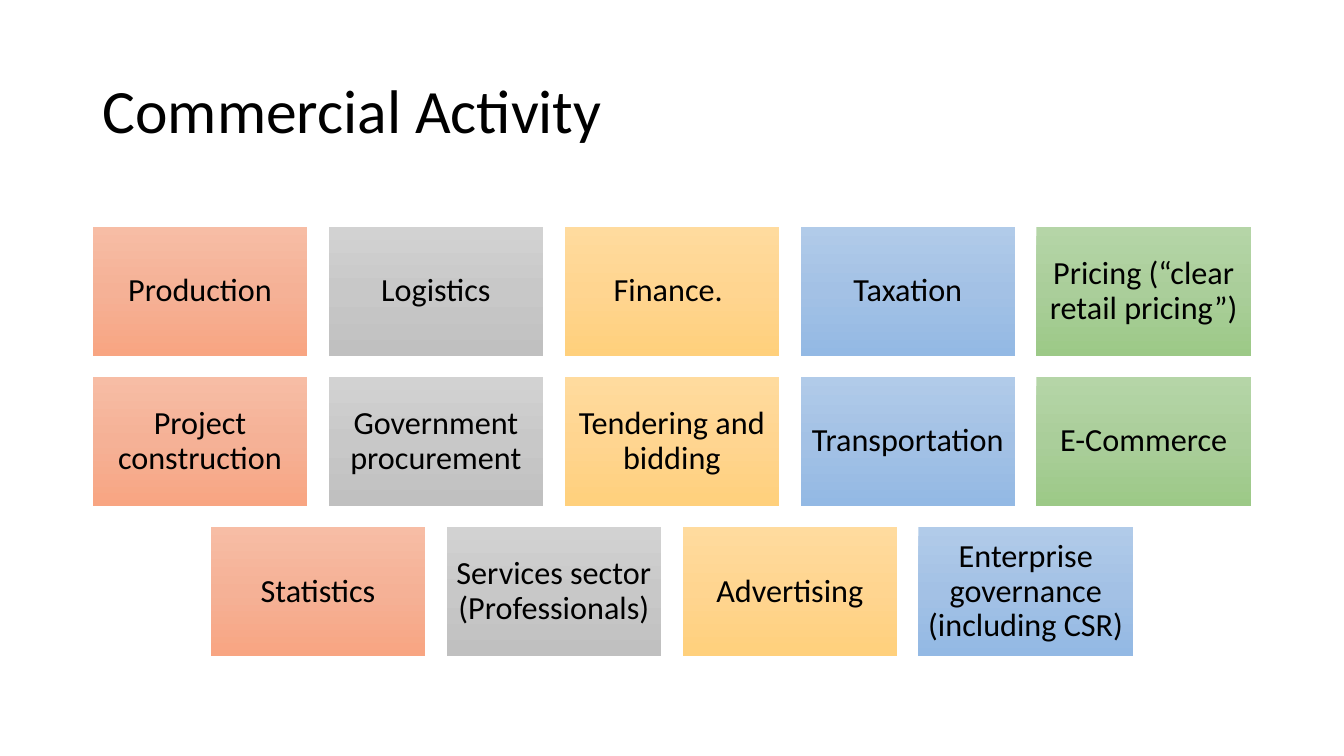
"""Build the Commercial Activity slide: a title above centred rows of gradient tiles."""
from copy import deepcopy

from pptx import Presentation
from pptx.dml.color import RGBColor
from pptx.enum.shapes import MSO_SHAPE
from pptx.enum.text import MSO_ANCHOR, PP_ALIGN
from pptx.oxml.ns import qn
from pptx.util import Inches, Pt

SLIDE_WIDTH, SLIDE_HEIGHT = 13.33, 7.5
TILE_WIDTH, TILE_HEIGHT, GAP = 2.13, 1.28, 0.21
MARGIN, FIRST_ROW_TOP = 0.92, 2.25

COLUMN_GRADIENTS = [
    ("F7BDA5", "F5B196", "F8A582"),
    ("D2D2D2", "C8C8C8", "C0C0C0"),
    ("FFDB9E", "FFD590", "FFD07C"),
    ("B1CBE9", "A3C1E5", "93B9E4"),
    ("B5D5A7", "AACE9A", "9CC987"),
]
ACTIVITY_ROWS = [
    ["Production", "Logistics", "Finance. ", "Taxation", "Pricing (“clear retail pricing”)"],
    ["Project construction", "Government procurement", "Tendering and bidding",
     "Transportation", "E-Commerce"],
    ["Statistics", "Services sector (Professionals)", "Advertising",
     "Enterprise governance (including CSR)"],
]


def color(value):
    return RGBColor.from_string(value)


def write(shape, text, size, align, inset):
    frame = shape.text_frame
    frame_format = {
        "word_wrap": True,
        "vertical_anchor": MSO_ANCHOR.MIDDLE,
        "margin_left": Inches(inset),
        "margin_right": Inches(inset),
        "margin_top": Inches(0.05),
        "margin_bottom": Inches(0.05),
    }
    for name, value in frame_format.items():
        setattr(frame, name, value)
    paragraph = frame.paragraphs[0]
    paragraph.text = text
    paragraph.alignment = align
    paragraph.line_spacing = 0.9
    for name, value in {"name": "Calibri", "size": Pt(size)}.items():
        setattr(paragraph.font, name, value)
    paragraph.font.color.rgb = color("000000")


deck = Presentation()
deck.slide_width, deck.slide_height = Inches(SLIDE_WIDTH), Inches(SLIDE_HEIGHT)
slide = deck.slides.add_slide(deck.slide_layouts[6])

title = slide.shapes.add_textbox(
    Inches(MARGIN), Inches(0.4), Inches(SLIDE_WIDTH - 2 * MARGIN), Inches(1.45))
write(title, "Commercial Activity", 44, PP_ALIGN.LEFT, 0.1)

for row, activities in enumerate(ACTIVITY_ROWS):
    row_width = len(activities) * (TILE_WIDTH + GAP) - GAP
    row_left = (SLIDE_WIDTH - row_width) / 2
    row_top = FIRST_ROW_TOP + row * (TILE_HEIGHT + GAP)
    for column, (activity, gradient) in enumerate(zip(activities, COLUMN_GRADIENTS)):
        tile = slide.shapes.add_shape(
            MSO_SHAPE.RECTANGLE,
            Inches(row_left + column * (TILE_WIDTH + GAP)), Inches(row_top),
            Inches(TILE_WIDTH), Inches(TILE_HEIGHT))
        tile.shadow.inherit = False
        tile.line.fill.background()
        tile.fill.gradient()
        tile.fill.gradient_angle = 270
        stop_list = next(tile.element.iter(qn("a:gsLst")))
        stop_list.insert(1, deepcopy(stop_list[0]))
        for stop, position, shade in zip(tile.fill.gradient_stops, (0, 0.5, 1), gradient):
            stop.position = position
            stop.color.rgb = color(shade)
        write(tile, activity, 23, PP_ALIGN.CENTER, 0.09)

deck.save("out.pptx")
